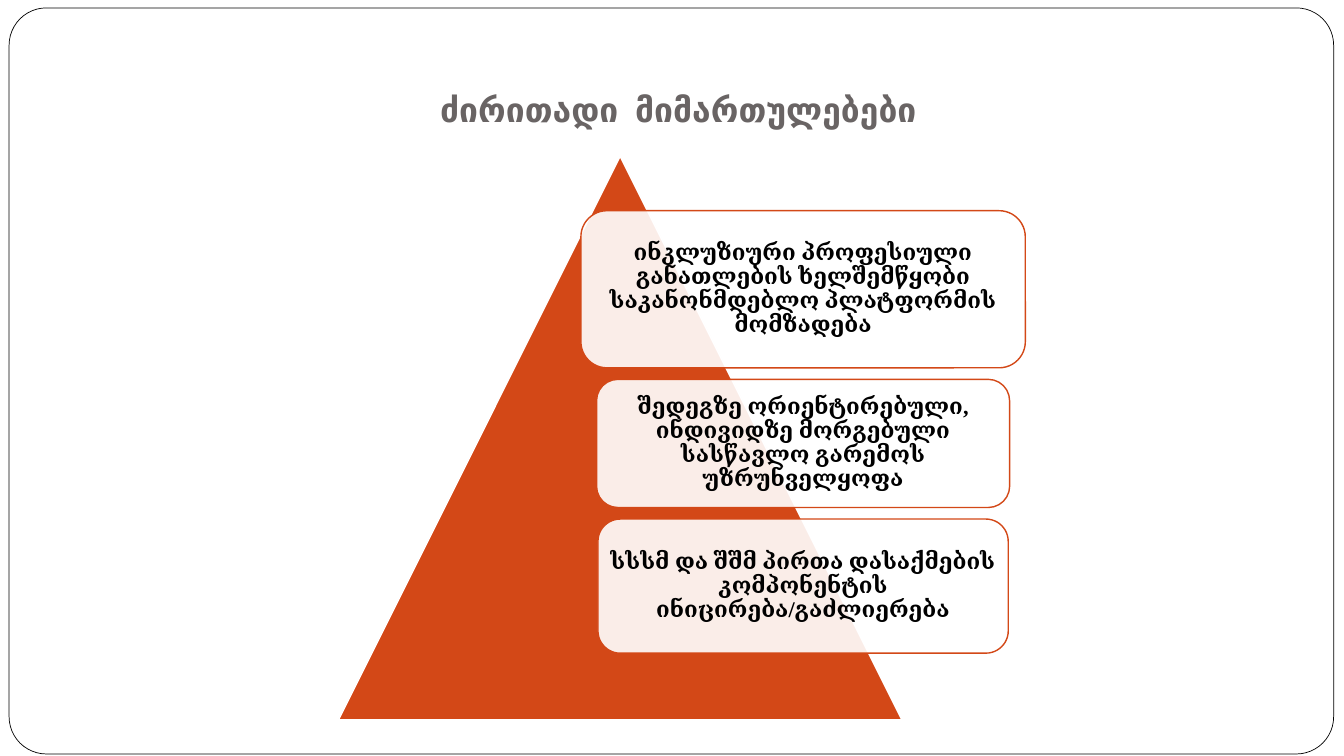
"""Build the slide of main directions: a triangle with three stacked cards."""
from dataclasses import dataclass

from lxml.etree import SubElement
from pptx import Presentation
from pptx.dml.color import RGBColor
from pptx.enum.shapes import MSO_SHAPE as Preset
from pptx.enum.text import MSO_ANCHOR as Anchor, MSO_AUTO_SIZE as AutoSize, PP_ALIGN as Align
from pptx.oxml.ns import qn
from pptx.shapes.autoshape import Shape
from pptx.slide import Slide
from pptx.text.text import TextFrame
from pptx.util import Cm, Pt

WHITE = RGBColor(0xFF, 0xFF, 0xFF)
BLACK = RGBColor(0x00, 0x00, 0x00)
ORANGE = RGBColor(0xD3, 0x48, 0x17)
GREY = RGBColor(0x69, 0x64, 0x64)

CARDS_CENTER = 20.24
CARDS_TOP = 5.31
CARD_GAP = 0.29


@dataclass
class Box:
    """Position and size in centimetres."""
    left: float
    top: float
    width: float
    height: float

    def lengths(self) -> tuple[Cm, Cm, Cm, Cm]:
        """Return the four values as lengths."""
        return Cm(self.left), Cm(self.top), Cm(self.width), Cm(self.height)


@dataclass
class Card:
    """A rounded card with its text."""
    width: float
    height: float
    text: str


CARDS = [
    Card(11.2, 3.96, "ინკლუზიური პროფესიული განათლების ხელშემწყობი "
                     "საკანონმდებლო პლატფორმის მომზადება"),
    Card(10.41, 3.23, "შედეგზე ორიენტირებული, ინდივიდზე მორგებული "
                      "სასწავლო გარემოს უზრუნველყოფა"),
    Card(10.34, 3.38, "სსსმ და შშმ პირთა დასაქმების კომპონენტის "
                      "ინიცირება/გაძლიერება"),
]


def add_preset(slide: Slide, preset: Preset, box: Box, fill: RGBColor,
               line: RGBColor, weight: float) -> Shape:
    """Add a filled and outlined preset shape without a shadow."""
    sp = slide.shapes.add_shape(preset, *box.lengths())
    sp.shadow.inherit = False
    sp.fill.solid()
    sp.fill.fore_color.rgb = fill
    sp.line.color.rgb = line
    sp.line.width = Pt(weight)
    return sp


def set_text(tf: TextFrame, text: str, font: str, size: float, color: RGBColor) -> None:
    """Write one centred bold paragraph."""
    tf.text = text
    tf.word_wrap = True
    tf.auto_size = AutoSize.NONE
    p = tf.paragraphs[0]
    p.alignment = Align.CENTER
    r = p.runs[0]
    r.font.name = font
    r.font.size = Pt(size)
    r.font.bold = True
    r.font.color.rgb = color


def add_frame(slide: Slide) -> None:
    """Add the rounded page frame behind everything else."""
    sp = add_preset(slide, Preset.ROUNDED_RECTANGLE, Box(0.23, 0.2, 33.38, 18.8),
                    WHITE, BLACK, 0.5)
    sp.adjustments[0] = 0.05
    slide.shapes._spTree.insert(2, sp._element)


def format_title(slide: Slide) -> None:
    """Place and format the title placeholder."""
    title = slide.shapes.title
    title.left, title.top, title.width, title.height = Box(2.01, 0.99, 30.18, 2.51).lengths()
    tf = title.text_frame
    set_text(tf, "ძირითადი  მიმართულებები", "Roboto", 24, GREY)
    tf.vertical_anchor = Anchor.BOTTOM
    tf.margin_bottom = Cm(0.25)


def add_card(slide: Slide, card: Card, top: float) -> None:
    """Add a slightly transparent card centred on the card column."""
    box = Box(CARDS_CENTER - card.width / 2, top, card.width, card.height)
    sp = add_preset(slide, Preset.ROUNDED_RECTANGLE, box, WHITE, ORANGE, 1)
    color = sp._element.spPr.find(qn("a:solidFill"))[0]
    SubElement(color, qn("a:alpha"), val="90000")
    tf = sp.text_frame
    set_text(tf, card.text, "Times New Roman", 16, BLACK)
    tf.vertical_anchor = Anchor.MIDDLE
    tf.margin_left = tf.margin_right = tf.margin_top = tf.margin_bottom = 0
    p = tf.paragraphs[0]
    p.line_spacing = 0.9
    p.space_after = Pt(5.6)


def main() -> None:
    """Build and save the presentation."""
    prs = Presentation()
    prs.slide_width, prs.slide_height = Cm(33.87), Cm(19.05)
    slide = prs.slides.add_slide(prs.slide_layouts[5])
    add_frame(slide)
    format_title(slide)
    add_preset(slide, Preset.ISOSCELES_TRIANGLE, Box(8.53, 3.94, 14.2, 14.2),
               ORANGE, WHITE, 1)
    top = CARDS_TOP
    for card in CARDS:
        add_card(slide, card, top)
        top += card.height + CARD_GAP
    prs.save("out.pptx")


if __name__ == "__main__":
    main()
